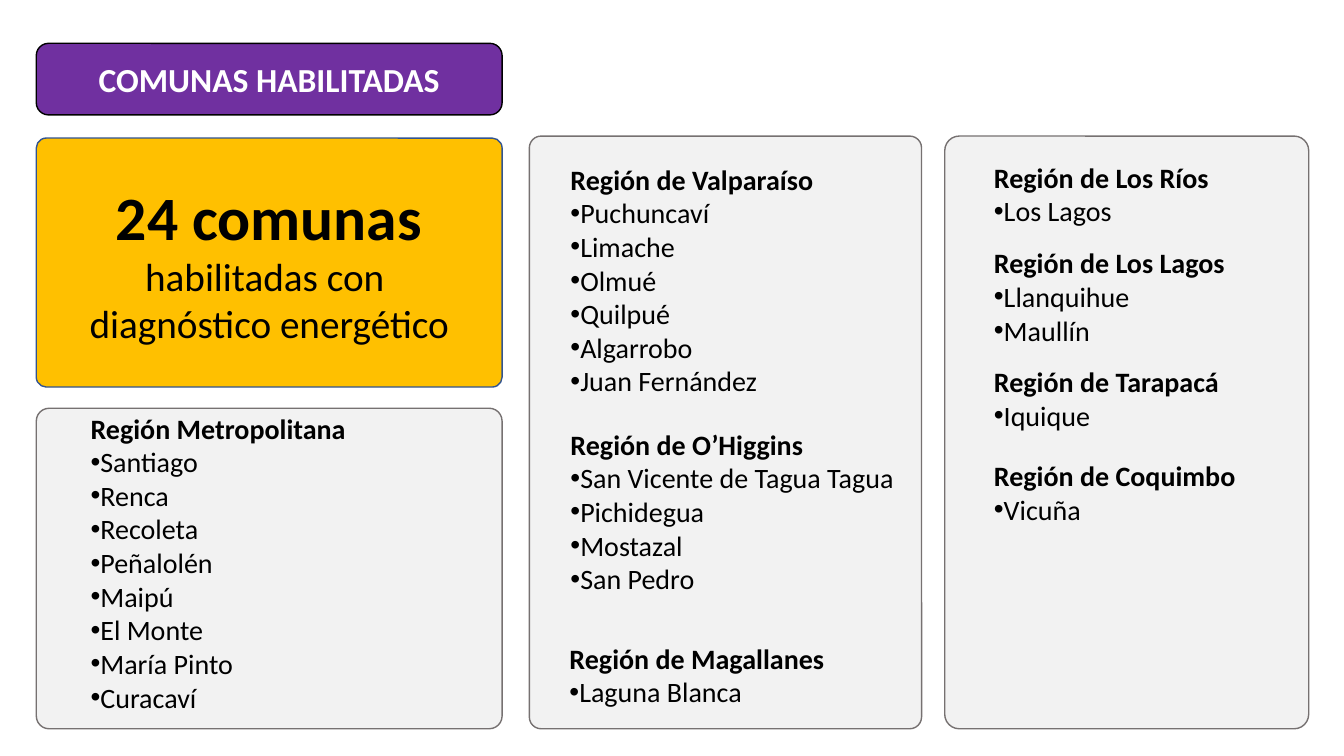
from pptx import Presentation
from pptx.dml.color import RGBColor
from pptx.enum.shapes import MSO_SHAPE
from pptx.enum.text import MSO_ANCHOR, PP_ALIGN
from pptx.oxml.ns import qn
from pptx.util import Pt
from lxml import etree

ROUND = MSO_SHAPE.ROUNDED_RECTANGLE
TOP, MIDDLE = MSO_ANCHOR.TOP, MSO_ANCHOR.MIDDLE
CENTER = PP_ALIGN.CENTER
PX = 9144  # 100 px to the inch

prs = Presentation()
prs.slide_width, prs.slide_height = 1333 * PX, 750 * PX
s = prs.slides.add_slide(prs.slide_layouts[6])


def rgb(color):
    return RGBColor.from_string(color)


def add_run(p, text, size, color="000000", bold=False):
    r = p.add_run()
    r.text = text
    r.font.name = "Calibri"
    r.font.size = Pt(size)
    r.font.bold = bold
    r.font.color.rgb = rgb(color)


# Cards: box, corner, fill, line, centred paragraphs of (text, size, color, bold)
cards = [
    ((937, 135, 361, 588), 0.04, "F2F2F2", "767171", []),
    ((525, 135, 389, 588), 0.03, "F2F2F2", "767171", []),
    ((36, 405, 462, 318), 0.04, "F2F2F2", "767171", []),
    ((36, 43, 462, 71), 0.17, "7030A0", "000000",
     [[("COMUNAS HABILITADAS", 24, "FFFFFF", True)]]),
    ((36, 137, 462, 247), 0.04, "FFC000", "325491",
     [[("24 comunas ", 44, "000000", True),
       ("habilitadas con ", 28, "000000", False)],
      [("diagnóstico energético", 28, "000000", False)]]),
]
for box, corner, fill, line, paragraphs in cards:
    sp = s.shapes.add_shape(ROUND, *[v * PX for v in box])
    sp.shadow.inherit = False
    sp.adjustments[0] = corner
    sp.fill.solid()
    sp.fill.fore_color.rgb = rgb(fill)
    sp.line.color.rgb = rgb(line)
    sp.line.width = Pt(1)
    tf = sp.text_frame
    tf.word_wrap = True
    tf.vertical_anchor = MIDDLE
    for i, runs in enumerate(paragraphs):
        p = tf.add_paragraph() if i else tf.paragraphs[0]
        p.alignment = CENTER
        for run in runs:
            add_run(p, *run)

# Regions: left, top, width, name, communes
regions = [
    (80, 403, 400, "Región Metropolitana",
     ["Santiago", "Renca", "Recoleta", "Peñalolén", "Maipú", "El Monte",
      "María Pinto", "Curacaví"]),
    (556, 156, 350, "Región de Valparaíso",
     ["Puchuncaví", "Limache", "Olmué", "Quilpué", "Algarrobo",
      "Juan Fernández"]),
    (556, 419, 350, "Región de O’Higgins",
     ["San Vicente de Tagua Tagua", "Pichidegua", "Mostazal", "San Pedro"]),
    (555, 631, 350, "Región de Magallanes", ["Laguna Blanca"]),
    (976, 154, 310, "Región de Los Ríos", ["Los Lagos"]),
    (976, 239, 310, "Región de Los Lagos", ["Llanquihue", "Maullín"]),
    (976, 357, 310, "Región de Tarapacá", ["Iquique"]),
    (976, 450, 310, "Región de Coquimbo", ["Vicuña"]),
]
LINE_H, PADDING = 34, 10
for left, top, width, region, communes in regions:
    height = LINE_H * (len(communes) + 1) + PADDING
    sp = s.shapes.add_textbox(left * PX, top * PX, width * PX, height * PX)
    tf = sp.text_frame
    tf.word_wrap = True
    tf.vertical_anchor = TOP
    add_run(tf.paragraphs[0], region, 20, bold=True)
    for commune in communes:
        p = tf.add_paragraph()
        pPr = p._p.get_or_add_pPr()
        etree.SubElement(pPr, qn("a:buFont")).set("typeface", "Arial")
        etree.SubElement(pPr, qn("a:buChar")).set("char", "•")
        add_run(p, commune, 20)

prs.save("out.pptx")
